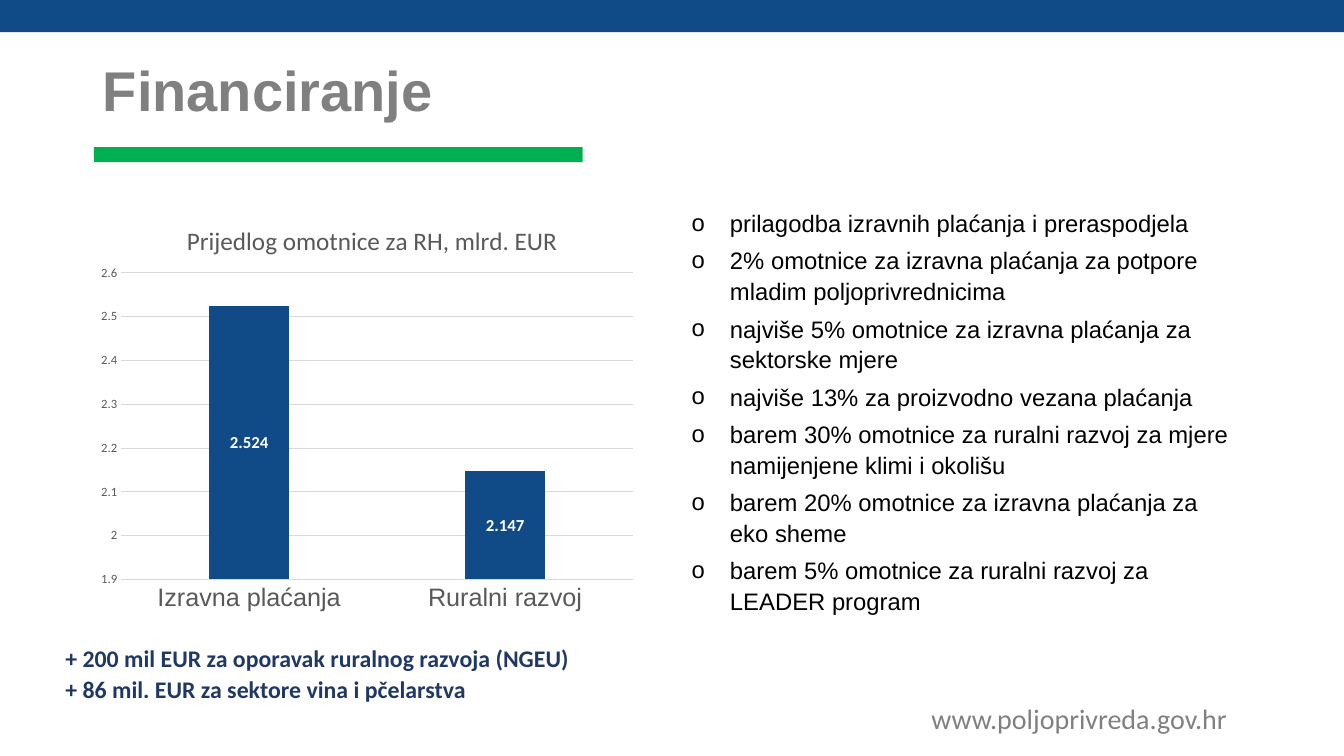
from dataclasses import dataclass

from lxml.etree import SubElement
from pptx import Presentation
from pptx.chart.data import CategoryChartData as Data
from pptx.dml.color import RGBColor as Rgb
from pptx.enum.chart import XL_CHART_TYPE as Kind, XL_LABEL_POSITION as Spot, XL_TICK_MARK as Tick
from pptx.enum.shapes import MSO_SHAPE as Form
from pptx.enum.text import MSO_ANCHOR as Anchor, MSO_AUTO_SIZE as Fit, PP_ALIGN as Align
from pptx.oxml import parse_xml
from pptx.oxml.ns import nsdecls, qn
from pptx.util import Pt

PX = 9144  # 100 px to the inch
HUES = {
    "blue": "114B87", "green": "00B050", "gray": "808080", "black": "000000",
    "navy": "203864", "label": "595959", "grid": "D9D9D9", "white": "FFFFFF",
}


@dataclass
class Box:
    x: int
    y: int
    w: int
    h: int

    def emu(self) -> list[int]:
        return [n * PX for n in (self.x, self.y, self.w, self.h)]


@dataclass
class Bar:
    box: Box
    hue: str


@dataclass
class Style:
    size: float
    face: str
    hue: str
    bold: bool = False


@dataclass
class Block:
    lines: list[str]
    style: Style
    form: dict
    inset: int = 0
    hang: int = 0
    level: int = 0
    mark: str = ""
    anchor: Anchor = Anchor.TOP
    fit: Fit = Fit.NONE


BARS = [
    Bar(Box(93, 146, 485, 15), "green"),
    Bar(Box(0, 0, 1333, 32), "blue"),
]
TITLE = Block(
    ["Financiranje"], Style(40, "Arial", "gray", True),
    {"line_spacing": 0.9, "alignment": Align.LEFT}, anchor=Anchor.MIDDLE,
)
LIST = Block(
    [
        "prilagodba izravnih plaćanja i preraspodjela",
        "2% omotnice za izravna plaćanja za potpore mladim poljoprivrednicima",
        "najviše 5% omotnice za izravna plaćanja za sektorske mjere",
        "najviše 13% za proizvodno vezana plaćanja",
        "barem 30% omotnice za ruralni razvoj za mjere namijenjene klimi i okolišu",
        "barem 20% omotnice za izravna plaćanja za eko sheme",
        "barem 5% omotnice za ruralni razvoj za LEADER program",
    ],
    Style(17, "Arial", "black"),
    {"line_spacing": 1.07, "space_before": Pt(5), "alignment": Align.LEFT},
    inset=39, hang=-38, level=1, mark="o",
)
NOTE = Block(
    [
        "+ 200 mil EUR za oporavak ruralnog razvoja (NGEU)",
        "+ 86 mil. EUR za sektore vina i pčelarstva",
    ],
    Style(17, "Calibri", "navy", True), {"line_spacing": 1.07},
    inset=2, level=1, fit=Fit.SHAPE_TO_FIT_TEXT,
)
SITE = Block(
    ["www.poljoprivreda.gov.hr"], Style(20, "Calibri", "gray"), {},
    fit=Fit.SHAPE_TO_FIT_TEXT,
)


def rgb(hue: str) -> Rgb:
    return Rgb.from_string(HUES[hue])


def set_all(item, vals: dict) -> None:
    for name, val in vals.items():
        setattr(item, name, val)


def set_font(font, style: Style) -> None:
    set_all(font, {"size": Pt(style.size), "name": style.face, "bold": style.bold})
    font.color.rgb = rgb(style.hue)


def draw_bar(slide, bar: Bar) -> None:
    shape = slide.shapes.add_shape(Form.RECTANGLE, *bar.box.emu())
    shape.shadow.inherit = False
    shape.fill.solid()
    shape.fill.fore_color.rgb = rgb(bar.hue)
    shape.line.fill.background()


def write(shape, box: Box, block: Block) -> None:
    set_all(shape, dict(zip(("left", "top", "width", "height"), box.emu())))
    frame = shape.text_frame
    frame.text = "\n".join(block.lines)
    set_all(frame, {
        "word_wrap": True, "auto_size": block.fit, "vertical_anchor": block.anchor,
    })
    for para in frame.paragraphs:
        set_all(para, {"level": block.level, **block.form})
        set_font(para.runs[0].font, block.style)
        props = para._p.get_or_add_pPr()
        props.set("marL", str(block.inset * PX))
        props.set("indent", str(block.hang * PX))
        if block.mark:
            SubElement(props, qn("a:buFont"), typeface=block.style.face)
            SubElement(props, qn("a:buChar"), char=block.mark)


def place(node, index: int, **vals: float) -> None:
    """Give a chart part a manual layout, in fractions of the chart."""
    for old in node.findall(qn("c:layout")):
        node.remove(old)
    rows = "".join(f'<c:{key} val="{val}"/>' for key, val in vals.items())
    inner = '<c:layoutTarget val="inner"/>' if "w" in vals else ""
    node.insert(index, parse_xml(
        f'<c:layout {nsdecls("c")}><c:manualLayout>{inner}'
        f'<c:xMode val="edge"/><c:yMode val="edge"/>{rows}'
        "</c:manualLayout></c:layout>"
    ))


def set_axis(axis, style: Style) -> None:
    set_all(axis, {"major_tick_mark": Tick.NONE, "minor_tick_mark": Tick.NONE})
    set_font(axis.tick_labels.font, style)


def set_line(line) -> None:
    line.color.rgb = rgb("grid")
    line.width = Pt(0.75)


def draw_chart(slide, box: Box) -> None:
    data = Data()
    data.categories = ["Izravna plaćanja", "Ruralni razvoj"]
    data.add_series("Series 1", [2.524, 2.147])
    chart = slide.shapes.add_chart(Kind.COLUMN_CLUSTERED, *box.emu(), data).chart
    chart.has_legend = False
    set_font(chart.font, Style(10, "Calibri", "black"))

    head = chart.chart_title.text_frame
    head.text = "Prijedlog omotnice za RH, mlrd. EUR"
    set_font(head.paragraphs[0].runs[0].font, Style(18, "Calibri", "label"))
    root = chart._chartSpace.chart
    place(root.find(qn("c:title")), 1, x=0.17, y=0.04)
    place(root.plotArea, 0, x=0.06, y=0.17, w=0.92, h=0.74)

    set_axis(chart.category_axis, Style(18, "Arial", "label"))
    set_line(chart.category_axis.format.line)
    scale = chart.value_axis
    set_axis(scale, Style(9, "Calibri", "label"))
    set_all(scale, {"minimum_scale": 1.9, "maximum_scale": 2.6, "major_unit": 0.1})
    scale.format.line.fill.background()
    set_line(scale.major_gridlines.format.line)

    plot = chart.plots[0]
    set_all(plot, {"gap_width": 219, "overlap": -27, "vary_by_categories": False})
    series = plot.series[0]
    series.format.fill.solid()
    series.format.fill.fore_color.rgb = rgb("blue")
    tags = series.data_labels
    set_all(tags, {"show_value": True, "position": Spot.CENTER})
    set_font(tags.font, Style(12, "Calibri", "white", True))


def main() -> None:
    deck = Presentation()
    set_all(deck, {"slide_width": 1333 * PX, "slide_height": 750 * PX})
    slide = deck.slides.add_slide(deck.slide_layouts[1])
    for bar in BARS:
        draw_bar(slide, bar)
    write(slide.shapes.title, Box(92, 40, 1150, 106), TITLE)
    write(slide.placeholders[1], Box(675, 200, 567, 476), LIST)
    draw_chart(slide, Box(87, 201, 552, 411))
    for box, block in ((Box(53, 632, 643, 71), NOTE), (Box(914, 691, 328, 44), SITE)):
        write(slide.shapes.add_textbox(*box.emu()), box, block)
    deck.save("out.pptx")


if __name__ == "__main__":
    main()
